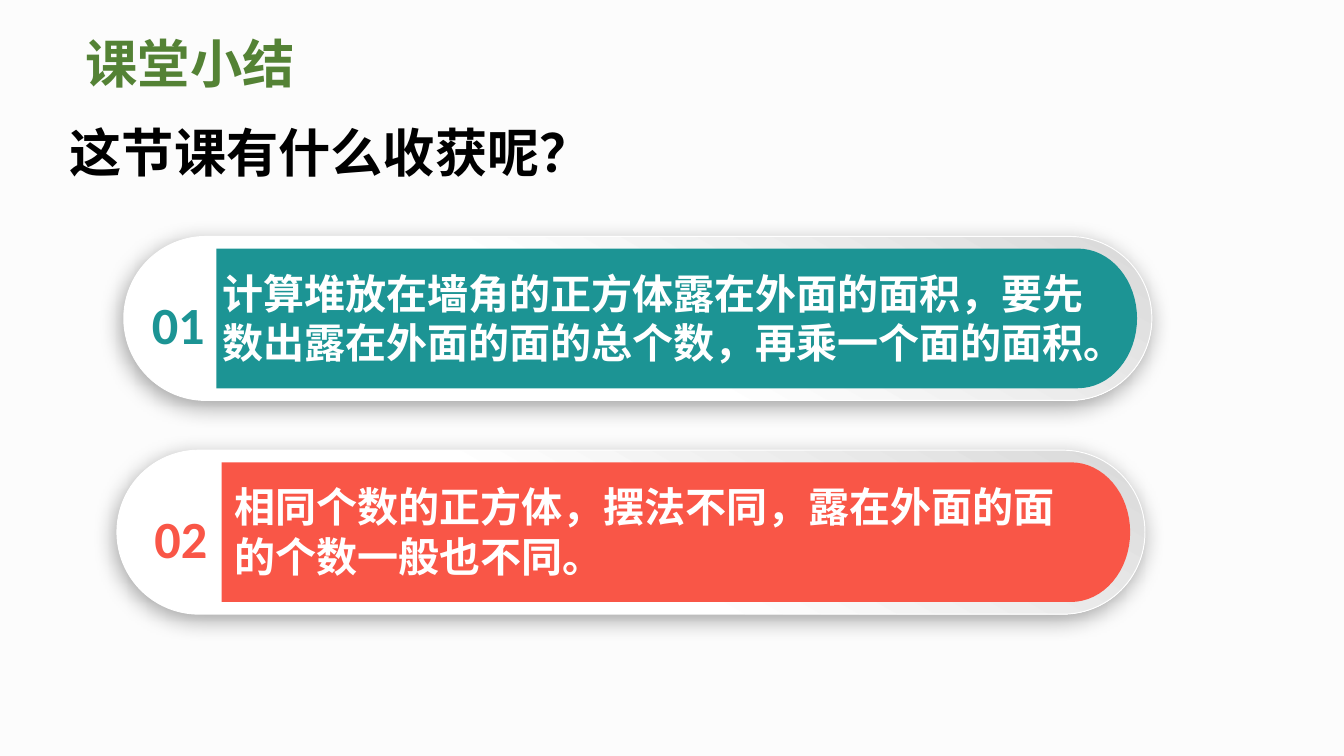
from math import cos, pi, sin

from lxml.etree import SubElement
from pptx import Presentation
from pptx.dml.color import RGBColor
from pptx.enum.shapes import MSO_SHAPE as Shape
from pptx.enum.text import MSO_AUTO_SIZE as AutoSize
from pptx.oxml.ns import qn
from pptx.util import Cm, Pt

CJK = "Noto Sans CJK SC"
BAR_SIZE = (19.43, 3.1)
PANEL_INSET = (0.28, 0.23)
CAP_WIDTH = 1.12
CAP_STEPS = 32


def paint(color_format, value):
    color_format.rgb = RGBColor.from_string(value)


def fill_solid(fill, value):
    fill.solid()
    paint(fill.fore_color, value)


def add_text(shapes, box, text, size, color, font=CJK, wrap=False, margins=(0.25, 0.13)):
    label = shapes.add_textbox(*map(Cm, box))
    side, edge = map(Cm, margins)
    frame_format = {
        "word_wrap": wrap, "auto_size": AutoSize.NONE,
        "margin_left": side, "margin_right": side,
        "margin_top": edge, "margin_bottom": edge,
    }
    for name, value in frame_format.items():
        setattr(label.text_frame, name, value)
    para = label.text_frame.paragraphs[0]
    para.line_spacing = Pt(size * 1.2)
    span = para.add_run()
    span.text = text
    for name, value in {"name": font, "size": Pt(size), "bold": True}.items():
        setattr(span.font, name, value)
    paint(span.font.color, color)
    SubElement(span.font._element, qn("a:ea"), typeface=CJK)


def add_soft_shadow(shape):
    shape.shadow.inherit = False
    effects = shape._element.spPr.find(qn("a:effectLst"))
    shadow = SubElement(effects, qn("a:outerShdw"), blurRad=str(Pt(12)),
                        dist=str(Pt(3)), dir=str(135 * 60000),
                        algn="tr", rotWithShape="0")
    tint = SubElement(shadow, qn("a:srgbClr"), val="000000")
    SubElement(tint, qn("a:alpha"), val="34000")


def add_bar(shapes, box):
    bar = shapes.add_shape(Shape.ROUNDED_RECTANGLE, *map(Cm, box))
    bar.adjustments[0] = 0.5
    bar.fill.gradient()
    bar.fill.gradient_angle = 60
    for stop, (position, color) in zip(bar.fill.gradient_stops,
                                       ((0.45, "FFFFFF"), (1, "D9D9D9"))):
        stop.position = position
        paint(stop.color, color)
    paint(bar.line.color, "FFFFFF")
    bar.line.width = Pt(0.5)
    add_soft_shadow(bar)


def add_panel(shapes, box, color):
    left, top, width, height = box
    cap_x, middle = left + width - CAP_WIDTH, top + height / 2
    angles = [pi * step / CAP_STEPS - pi / 2 for step in range(CAP_STEPS + 1)]
    cap = [(cap_x + CAP_WIDTH * cos(angle), middle + height / 2 * sin(angle))
           for angle in angles]
    outline = shapes.build_freeform(Cm(left), Cm(top))
    points = cap + [(left, top + height)]
    outline.add_line_segments([(Cm(x), Cm(y)) for x, y in points], close=True)
    panel = outline.convert_to_shape()
    panel.shadow.inherit = False
    fill_solid(panel.fill, color)
    panel.line.fill.background()


def add_takeaway(page, origin, number, number_x, panel_x, text_box, text, color):
    left, top = origin
    width, height = BAR_SIZE
    inset_x, inset_y = PANEL_INSET
    shapes = page.shapes.add_group_shape().shapes
    add_bar(shapes, (left, top, width, height))
    add_panel(shapes, (left + panel_x, top + inset_y,
                       width - panel_x - inset_x, height - 2 * inset_y), color)
    add_text(shapes, (left + number_x, top + 0.93, 1.52, 1.45),
             number, 28, color, font="Calibri")
    text_x, text_width = text_box
    add_text(page.shapes, (left + text_x, top + 0.47, text_width, 2.13),
             text, 22, "FFFFFF", font="Times New Roman", wrap=True)


def add_headings(page, box):
    left, top, width, height = box
    add_text(page.shapes, (left + 0.23, top, 4.72, 1.45),
             "课堂小结", 28, "548235", wrap=True)
    add_text(page.shapes, (left, top + height - 1.4, width, 1.4),
             "这节课有什么收获呢？", 28, "000000", margins=(0.18, 0.1))


def main():
    deck = Presentation()
    deck.slide_width, deck.slide_height = Cm(25.4), Cm(14.29)
    page = deck.slides.add_slide(deck.slide_layouts[6])
    fill_solid(page.background.fill, "FCFCFC")
    add_headings(page, (1.14, 0.46, 10.41, 3.12))
    add_takeaway(page, (2.21, 8.51), "02", 0.46, 1.98, (1.98, 16.48),
                 "相同个数的正方体，摆法不同，露在外面的面的个数一般也不同。", "F95647")
    add_takeaway(page, (2.34, 4.47), "01", 0.28, 1.75, (1.62, 17.15),
                 "计算堆放在墙角的正方体露在外面的面积，要先数出露在外面的面的总个数，"
                 "再乘一个面的面积。", "1C9494")
    deck.save("out.pptx")


if __name__ == "__main__":
    main()
